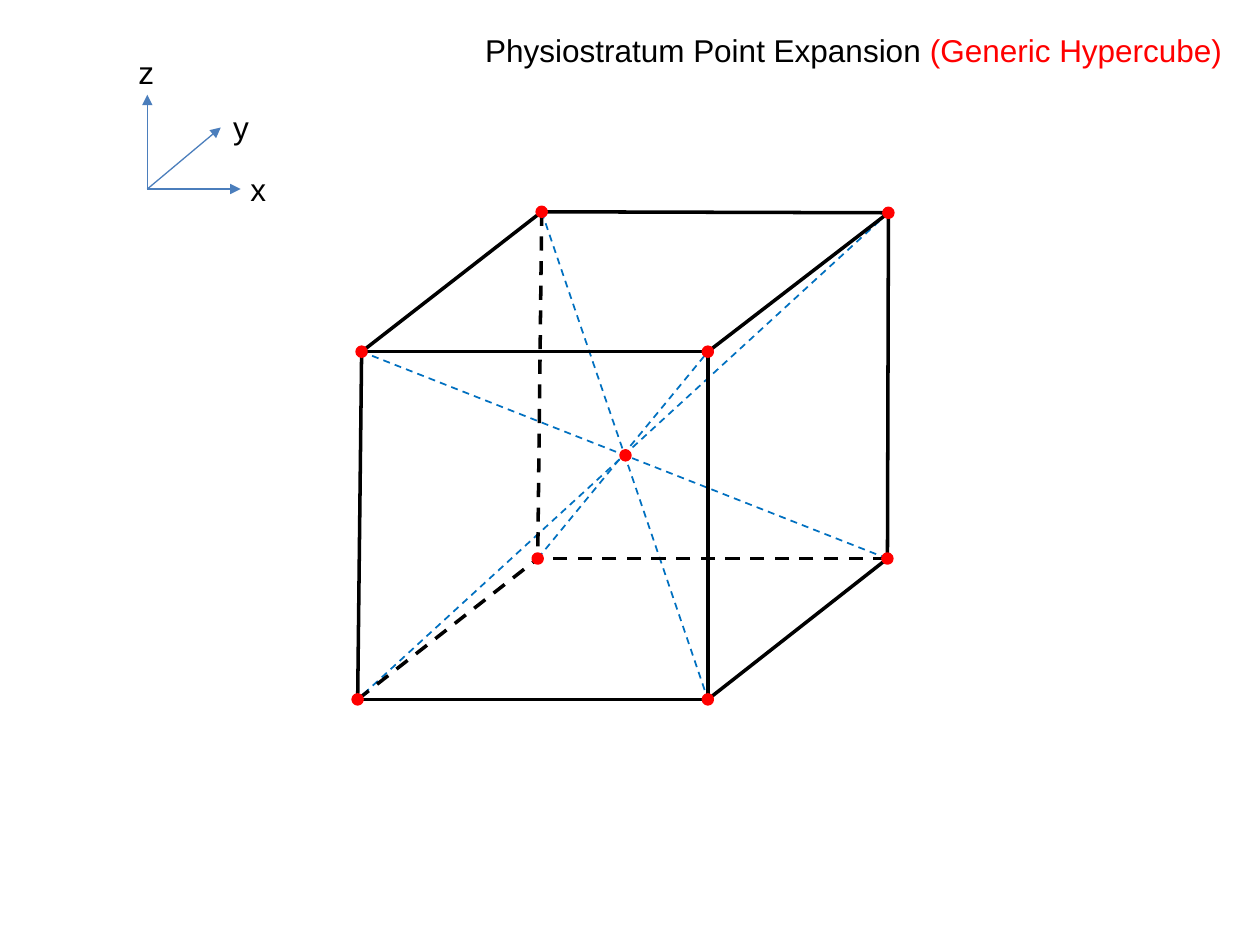
from dataclasses import dataclass

from pptx import Presentation
from pptx import util as u
from pptx.dml.color import RGBColor
from pptx.enum import dml, shapes, text
from pptx.oxml import parse_xml
from pptx.oxml.ns import nsdecls


@dataclass(frozen=True)
class Theme:
    ink: str = "000000"
    accent: str = "FF0000"
    diagonal: str = "0070C0"
    axis: str = "4B7EBC"
    font: str = "Arial"
    size: int = 18
    edge_width: float = 2
    diagonal_width: float = 1
    axis_width: float = 0.75
    dot: float = 0.18


@dataclass(frozen=True)
class Box:
    left: float
    top: float
    width: float = 0
    height: float = 0

    def point(self, position):
        return u.Cm(self.left + position[0]), u.Cm(self.top + position[1])


THEME = Theme()
CORNERS = {
    "back top left": (3.71, 0),
    "front top left": (0.08, 2.82),
    "back bottom right": (10.68, 6.99),
    "front bottom left": (0, 9.83),
    "front bottom right": (7.06, 9.83),
    "back top right": (10.7, 0.02),
    "front top right": (7.06, 2.82),
    "back bottom left": (3.63, 6.99),
}
CENTER = (5.4, 4.91)
HIDDEN = "back bottom left"
OPPOSITE = {
    "front": "back", "back": "front",
    "top": "bottom", "bottom": "top",
    "left": "right", "right": "left",
}


def set_values(target, values):
    for name, value in values.items():
        setattr(target, name, value)


def add_line(page, box, start, end, color, width, dashed=False, arrow=False):
    line = page.shapes.add_connector(
        shapes.MSO_CONNECTOR.STRAIGHT, *box.point(start), *box.point(end))
    line.line.color.rgb = RGBColor.from_string(color)
    line.line.width = u.Pt(width)
    if dashed:
        line.line.dash_style = dml.MSO_LINE.DASH
    if arrow:
        line.line._get_or_add_ln().append(
            parse_xml(f'<a:tailEnd {nsdecls("a")} type="triangle"/>'))
    properties = line._element.spPr
    properties.append(parse_xml(f'<a:effectLst {nsdecls("a")}/>'))


def add_dot(page, box, center):
    corner = [value - THEME.dot / 2 for value in center]
    dot = page.shapes.add_shape(
        shapes.MSO_SHAPE.OVAL, *box.point(corner),
        u.Cm(THEME.dot), u.Cm(THEME.dot))
    dot.shadow.inherit = False
    color = RGBColor.from_string(THEME.accent)
    dot.fill.solid()
    dot.fill.fore_color.rgb = color
    dot.line.color.rgb = color
    dot.line.width = u.Pt(THEME.edge_width)


def add_text(page, box, spans):
    label = page.shapes.add_textbox(
        *box.point((0, 0)), u.Cm(box.width), u.Cm(box.height))
    set_values(label.text_frame, {
        "word_wrap": True,
        "auto_size": text.MSO_AUTO_SIZE.SHAPE_TO_FIT_TEXT,
    })
    para = label.text_frame.paragraphs[0]
    for words, color in spans:
        span = para.add_run()
        span.text = words
        set_values(span.font, {"name": THEME.font, "size": u.Pt(THEME.size)})
        span.font.color.rgb = RGBColor.from_string(color)


def draw_cube(page, box):
    names = list(CORNERS)
    for name in names:
        if name.startswith("back"):
            other = " ".join(OPPOSITE[word] for word in name.split())
            add_line(page, box, CORNERS[name], CORNERS[other],
                     THEME.diagonal, THEME.diagonal_width, dashed=True)
    for index, first in enumerate(names):
        for second in names[index + 1:]:
            shared = set(first.split()) & set(second.split())
            if len(shared) == 2:
                add_line(page, box, CORNERS[first], CORNERS[second],
                         THEME.ink, THEME.edge_width,
                         dashed=HIDDEN in (first, second))
    for center in [*CORNERS.values(), CENTER]:
        add_dot(page, box, center)


def draw_axes(page, box):
    origin = (0.43, 2.87)
    axes = {
        "x": ((2.31, 2.87), (2.26, 2.36)),
        "y": ((1.91, 1.63), (1.91, 1.12)),
        "z": ((0.43, 0.97), (0, 0)),
    }
    for name, (tip, place) in axes.items():
        add_line(page, box, origin, tip,
                 THEME.axis, THEME.axis_width, arrow=True)
        label = Box(box.left + place[0], box.top + place[1], 0.64, 1.02)
        add_text(page, label, [(name, THEME.ink)])


def draw_title(page, box):
    add_text(page, box, [
        ("Physiostratum Point Expansion ", THEME.ink),
        ("(Generic Hypercube)", THEME.accent),
    ])


def main():
    deck = Presentation()
    set_values(deck, {"slide_width": u.Cm(25.4), "slide_height": u.Cm(19.05)})
    page = deck.slides.add_slide(deck.slide_layouts[6])
    draw_cube(page, Box(7.21, 4.27, 10.7, 9.83))
    draw_axes(page, Box(2.54, 0.94, 2.9, 3.38))
    draw_title(page, Box(9.53, 0.51, 15.67, 1.02))
    deck.save("out.pptx")


if __name__ == "__main__":
    main()
